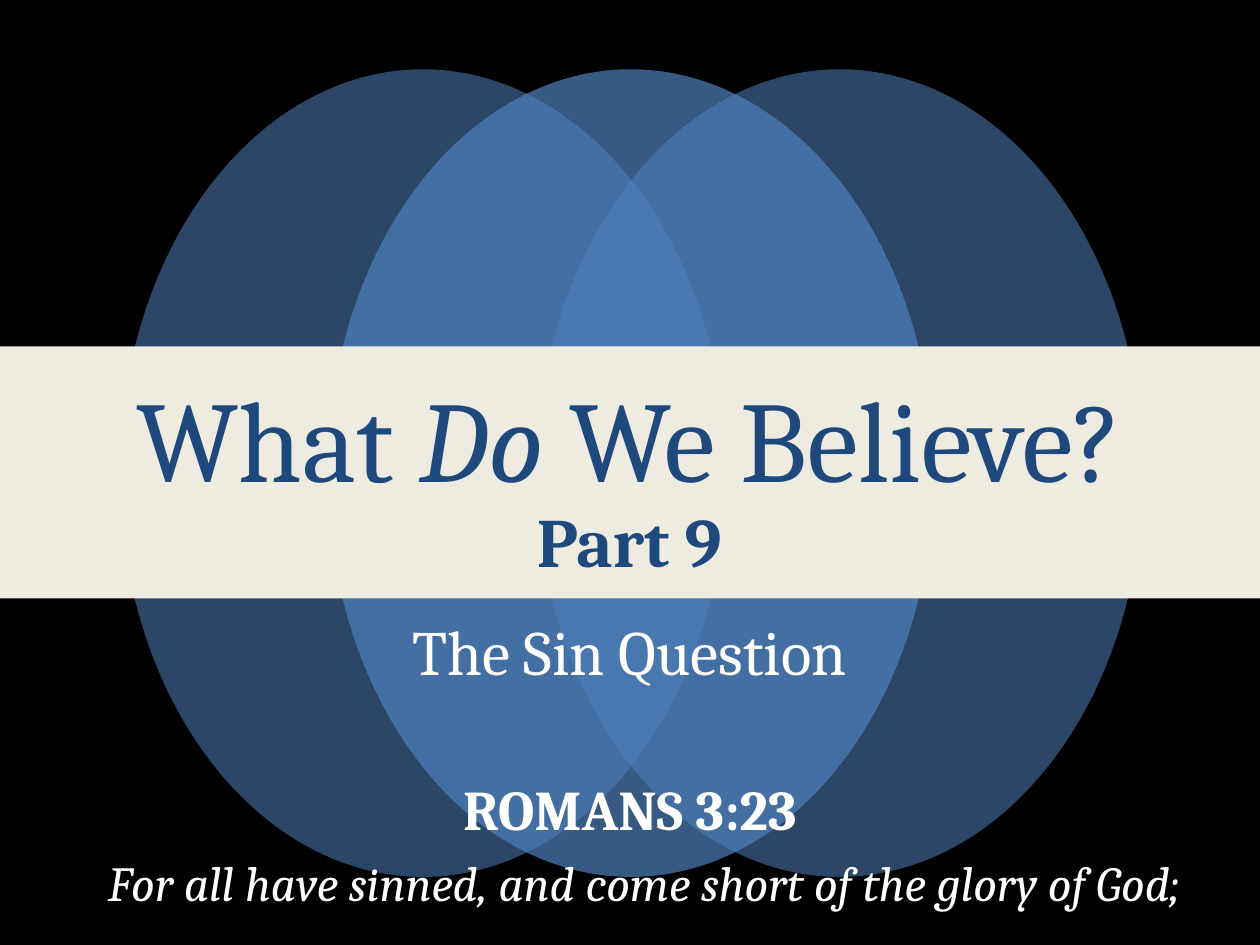
from lxml import etree
from pptx import Presentation
from pptx.dml.color import RGBColor
from pptx.enum.shapes import MSO_SHAPE
from pptx.enum.text import MSO_ANCHOR, PP_ALIGN
from pptx.oxml.ns import qn
from pptx.util import Inches, Pt

OVAL, RECTANGLE = MSO_SHAPE.OVAL, MSO_SHAPE.RECTANGLE
TOP, MIDDLE = MSO_ANCHOR.TOP, MSO_ANCHOR.MIDDLE
CENTER = PP_ALIGN.CENTER

FONT = "Cambria"
BLACK, WHITE, NAVY, BLUE, CREAM = "000000", "FFFFFF", "1F497D", "4F81BD", "EEECE1"

# Content: each line is (spans, paragraph format); each span is (text, font format)
TITLE_LINES = [
    ([("What ", dict(size=65.7, color=NAVY)),
      ("Do", dict(size=65.7, color=NAVY, italic=True)),
      (" We Believe?", dict(size=65.7, color=NAVY))], dict(spacing=0.9)),
    ([("Part 9", dict(size=39.6, color=NAVY, bold=True))], dict(spacing=0.9)),
    ([("The Sin Question", dict(size=36))], dict(spacing=0.9, before=22)),
]
VERSE_LINES = [
    ([("ROMANS 3:23", dict(size=32, bold=True))], {}),
    ([("For all have sinned, and come short of the glory of God;",
       dict(size=28, italic=True))], dict(before=6, indent=16)),
]

# Ellipses from back to front: left edge, opacity in percent
ELLIPSES = [(0.95, 55), (4.26, 55), (2.6, 70)]


def rgb(value):
    return RGBColor.from_string(value)


def add_filled(page, kind, place, color, opacity=100):
    shape = page.shapes.add_shape(kind, *map(Inches, place))
    shape.shadow.inherit = False
    shape.line.fill.background()
    shape.fill.solid()
    shape.fill.fore_color.rgb = rgb(color)
    if opacity < 100:
        tint = shape.fill._xPr.find(qn("a:solidFill"))[0]
        etree.SubElement(tint, qn("a:alpha"), val=str(opacity * 1000))
    return shape


def add_span(para, text, size, color=WHITE, bold=False, italic=False):
    span = para.add_run()
    span.text = text
    font = span.font
    font.name, font.size = FONT, Pt(size)
    font.bold, font.italic = bold, italic
    font.color.rgb = rgb(color)


def add_text(page, lines, place, anchor=TOP):
    box = page.shapes.add_textbox(*map(Inches, place))
    frame = box.text_frame
    frame.word_wrap = True
    frame.vertical_anchor = anchor
    for index, (spans, layout) in enumerate(lines):
        para = frame.add_paragraph() if index else frame.paragraphs[0]
        para.alignment = CENTER
        para.line_spacing = layout.get("spacing", 1.0)
        para.space_before = Pt(layout.get("before", 0))
        if "indent" in layout:
            para._p.get_or_add_pPr().set("marL", str(Pt(layout["indent"])))
        for text, style in spans:
            add_span(para, text, **style)


def main():
    deck = Presentation()
    deck.slide_width, deck.slide_height = Inches(10), Inches(7.5)
    page = deck.slides.add_slide(deck.slide_layouts[6])
    page.background.fill.solid()
    page.background.fill.fore_color.rgb = rgb(BLACK)

    # Overlapping ellipses behind a full-width band
    for left, opacity in ELLIPSES:
        add_filled(page, OVAL, (left, 0.55, 4.81, 6.41), BLUE, opacity)
    add_filled(page, RECTANGLE, (0, 2.75, 10, 2), CREAM)

    # Title and verse
    add_text(page, TITLE_LINES, (0.08, 3.5, 9.83, 1.51), MIDDLE)
    add_text(page, VERSE_LINES, (0.25, 6.1, 9.5, 0.83))

    deck.save("out.pptx")


if __name__ == "__main__":
    main()
